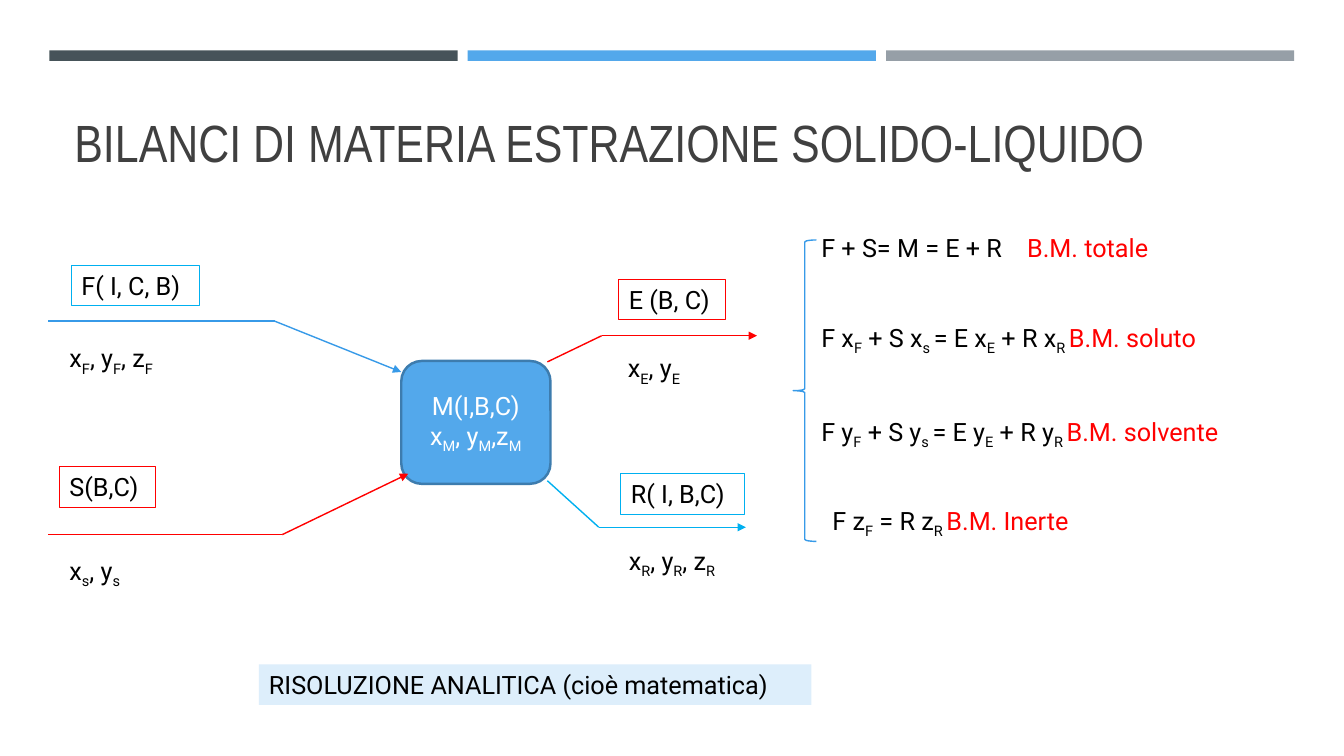
import pptx
import pptx.util
import pptx.dml.color
import pptx.enum.shapes
import pptx.enum.text
import pptx.oxml.ns
import pptx.shapes.autoshape
import pptx.slide
import pptx.text.text
import lxml.etree
from dataclasses import dataclass

Pt = pptx.util.Pt
SHAPE = pptx.enum.shapes.MSO_SHAPE
ANCHOR = pptx.enum.text.MSO_ANCHOR
ALIGN = pptx.enum.text.PP_ALIGN

COLORS = {
    "slate": "465359", "blue": "53A8EB", "grey": "969FA7", "title": "404040",
    "edge": "3D7CAE", "line": "379AE8", "red": "FF0000", "cyan": "00B0F0",
    "pale": "DDEEFB", "black": "000000", "white": "FFFFFF",
}
BODY = {"name": "Roboto", "size": Pt(18)}
TITLE = {"name": "Arial Narrow", "size": Pt(37.4)}
LABEL_H = 29


@dataclass
class Label:
    left: float
    top: float
    width: float
    text: str
    line: str = ""
    fill: str = ""


@dataclass
class Stream:
    points: list[tuple[float, float]]
    color: str
    arrow_at: int


LABELS = [
    Label(51.1, 189.4, 91.4, "F( I, C, B)", "cyan"),
    Label(42.5, 333.4, 68.4, "S(B,C)", "red"),
    Label(442.1, 199.4, 76.3, "E (B, C)", "red"),
    Label(443.5, 338.4, 88.6, "R( I, B,C)", "cyan"),
    Label(42.5, 241.2, 82.8, "x{F}, y{F}, z{F}"),
    Label(42.5, 393.1, 56.9, "x{s}, y{s}"),
    Label(441.4, 248.4, 59.8, "x{E}, y{E}"),
    Label(442.1, 385.9, 87.1, "x{R}, y{R}, z{R}"),
    Label(579.6, 162.7, 267.8, "F + S= M = E + R\t|B.M. totale"),
    Label(579.6, 226.8, 310.3, "F x{F} + S x{s }= E x{E} + R x{R }|B.M. soluto"),
    Label(579.6, 293.8, 329.8, "F y{F} + S y{s }= E y{E} + R y{R }|B.M. solvente"),
    Label(587.5, 357.1, 195.8, "F z{F} = R z{R }|B.M. Inerte"),
    Label(185, 474.5, 394.6, "RISOLUZIONE ANALITICA (cioè matematica)", fill="pale"),
]

STREAMS = [
    Stream([(34.6, 229.4), (196.2, 229.4), (286.6, 265.7)], "line", 2),
    Stream([(34.6, 381.9), (201.6, 381.9), (291.6, 338.4)], "red", 2),
    Stream([(391, 258.5), (429.8, 239.8), (540.7, 239.8)], "red", 2),
    Stream([(391, 343.4), (427.7, 376.6), (532.8, 376.6)], "cyan", 2),
]


def rgb(name: str) -> pptx.dml.color.RGBColor:
    return pptx.dml.color.RGBColor.from_string(COLORS[name])


def add_child(parent: lxml.etree._Element, tag: str, **attrs: str) -> lxml.etree._Element:
    return lxml.etree.SubElement(parent, pptx.oxml.ns.qn(tag), attrs)


def add_box(s: pptx.slide.Slide, kind: SHAPE, box: tuple[float, ...], fill: str = "",
            line: str = "", width: float = 0.75) -> pptx.shapes.autoshape.Shape:
    sp = s.shapes.add_shape(kind, *map(Pt, box))
    sp.shadow.inherit = False
    if fill:
        sp.fill.solid()
        sp.fill.fore_color.rgb = rgb(fill)
    else:
        sp.fill.background()
    if line:
        sp.line.color.rgb = rgb(line)
        sp.line.width = Pt(width)
    else:
        sp.line.fill.background()
    return sp


def write(p: pptx.text.text._Paragraph, text: str, color: str, fmt: dict[str, object]) -> None:
    for part, part_color in zip(text.split("|"), (color, "red")):
        for i, chunk in enumerate(part.replace("}", "{").split("{")):
            if not chunk:
                continue
            r = p.add_run()
            r.text = chunk
            for key, value in fmt.items():
                setattr(r.font, key, value)
            r.font.color.rgb = rgb(part_color)
            if i % 2:
                r.font._element.set("baseline", "-25000")


def add_label(s: pptx.slide.Slide, label: Label) -> None:
    box = (label.left, label.top, label.width, LABEL_H)
    if label.line or label.fill:
        sp = add_box(s, SHAPE.RECTANGLE, box, label.fill, label.line)
    else:
        sp = s.shapes.add_textbox(*map(Pt, box))
    tf = sp.text_frame
    tf.word_wrap = True
    tf.vertical_anchor = ANCHOR.TOP
    p = tf.paragraphs[0]
    p.alignment = ALIGN.LEFT
    if "\t" in label.text:
        tabs = add_child(p._p.get_or_add_pPr(), "a:tabLst")
        add_child(tabs, "a:tab", pos=str(Pt(147)), algn="l")
    write(p, label.text, "black", BODY)


def add_stream(s: pptx.slide.Slide, stream: Stream) -> None:
    pairs = zip(stream.points, stream.points[1:])
    for end_index, (start, end) in enumerate(pairs, 1):
        c = s.shapes.add_connector(
            pptx.enum.shapes.MSO_CONNECTOR.STRAIGHT, *map(Pt, start + end))
        c.line.color.rgb = rgb(stream.color)
        c.line.width = Pt(1)
        if end_index == stream.arrow_at:
            add_child(c.line._get_or_add_ln(), "a:tailEnd", type="triangle")
        add_child(c._element.spPr, "a:effectLst")


def add_title(s: pptx.slide.Slide, text: str) -> None:
    tf = s.shapes.add_textbox(Pt(46.1), Pt(84.2), Pt(868.3), Pt(59.8)).text_frame
    tf.word_wrap = True
    tf.paragraphs[0].line_spacing = 0.8
    write(tf.paragraphs[0], text, "title", TITLE)


def add_mixer(s: pptx.slide.Slide, lines: list[str]) -> None:
    sp = add_box(s, SHAPE.ROUNDED_RECTANGLE, (286.6, 257.8, 106.6, 87.8),
                 "blue", "edge", 1.75)
    tf = sp.text_frame
    tf.vertical_anchor = ANCHOR.MIDDLE
    for i, text in enumerate(lines):
        p = tf.add_paragraph() if i else tf.paragraphs[0]
        p.alignment = ALIGN.CENTER
        write(p, text, "white", BODY)


def main() -> None:
    prs = pptx.Presentation()
    prs.slide_width, prs.slide_height = Pt(960), Pt(540)
    s = prs.slides.add_slide(prs.slide_layouts[6])
    for i, color in enumerate(("slate", "blue", "grey")):
        add_box(s, SHAPE.RECTANGLE, (35.3 + i * 298.8, 36, 291.6, 7.5), color)
    add_title(s, "BILANCI DI MATERIA ESTRAZIONE SOLIDO-LIQUIDO")
    add_mixer(s, ["M(I,B,C)", "x{M}, y{M},z{M}"])
    for stream in STREAMS:
        add_stream(s, stream)
    for label in LABELS:
        add_label(s, label)
    add_box(s, SHAPE.LEFT_BRACE, (566.6, 171.4, 16.6, 215.3), line="line", width=1)
    prs.save("out.pptx")


if __name__ == "__main__":
    main()
